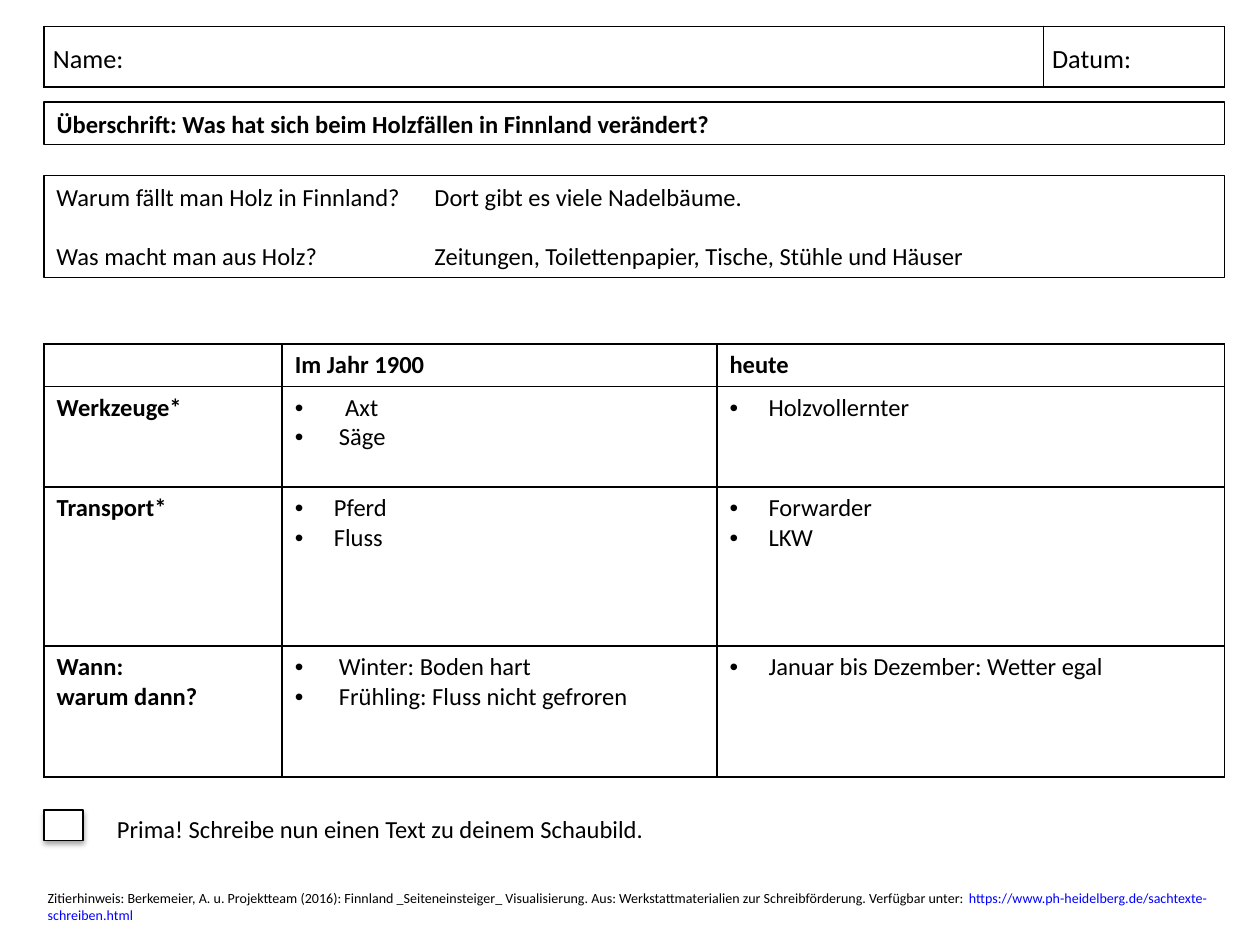
"""Build a German worksheet slide about logging in Finland, then and now."""
from typing import NamedTuple

from lxml.etree import SubElement
from pptx import Presentation
from pptx.dml.color import RGBColor
from pptx.enum.shapes import MSO_SHAPE
from pptx.enum.text import MSO_ANCHOR as Anchor, MSO_AUTO_SIZE as AutoSize, PP_ALIGN as Align
from pptx.oxml.ns import qn
from pptx.util import Inches, Pt

COLORS = {"ink": "000000", "paper": "FFFFFF", "link": "0000FF"}
FONT_NAME = "Calibri"
LEFT, WIDTH = 0.35, 9.37
BODY_SIZE = 14


class Box(NamedTuple):
    left: float
    top: float
    width: float
    height: float

    def lengths(self) -> list:
        return [Inches(value) for value in self]


class Line(NamedTuple):
    text: str
    bold: bool = False
    size: float = BODY_SIZE
    hang: float = 0
    indent: float = 0
    tab: float = 0
    space_before: float = 0
    line_spacing: float = 1


class Row(NamedTuple):
    height: float
    cells: list[list[Line]]


def color(name: str) -> RGBColor:
    return RGBColor.from_string(COLORS[name])


def write(frame, lines: list[Line]) -> None:
    """Fill a text frame with formatted paragraphs."""
    frame.word_wrap = True
    for index, line in enumerate(lines):
        paragraph = frame.add_paragraph() if index else frame.paragraphs[0]
        paragraph.alignment = Align.LEFT
        paragraph.line_spacing = line.line_spacing
        paragraph.space_before = Pt(line.space_before)
        properties = paragraph._p.get_or_add_pPr()
        if line.hang:
            SubElement(properties, qn("a:buFont"), typeface="Arial")
            SubElement(properties, qn("a:buChar"), char="•")
        if line.hang or line.indent:
            properties.set("marL", str(Inches(line.hang + line.indent)))
            properties.set("indent", str(Inches(-line.hang)))
        if line.tab:
            stops = SubElement(properties, qn("a:tabLst"))
            SubElement(stops, qn("a:tab"), pos=str(Inches(line.tab)), algn="l")
        font = paragraph.font
        font.name, font.size, font.bold = FONT_NAME, Pt(line.size), line.bold
        font.color.rgb = color("ink")
        if line.text:
            paragraph.add_run().text = line.text
        else:
            SubElement(paragraph._p, qn("a:endParaRPr"), sz=str(line.size * 100))


def outline(shape) -> None:
    shape.line.color.rgb = color("ink")
    shape.line.width = Pt(0.75)


def add_box(slide, box: Box, lines: list[Line], outlined: bool = True):
    """Add a rectangle with text anchored in the middle."""
    shape = slide.shapes.add_shape(MSO_SHAPE.RECTANGLE, *box.lengths())
    shape.shadow.inherit = False
    shape.fill.solid()
    shape.fill.fore_color.rgb = color("paper")
    if outlined:
        outline(shape)
    else:
        shape.line.fill.background()
    shape.text_frame.vertical_anchor = Anchor.MIDDLE
    write(shape.text_frame, lines)
    return shape


def add_borders(cell) -> None:
    properties = cell._tc.get_or_add_tcPr()
    for index, side in enumerate(("lnL", "lnR", "lnT", "lnB")):
        border = SubElement(properties, qn(f"a:{side}"), w=str(Pt(1)))
        fill = SubElement(border, qn("a:solidFill"))
        SubElement(fill, qn("a:srgbClr"), val=COLORS["ink"])
        properties.insert(index, border)


def add_grid(slide, top: float, columns: list[float], rows: list[Row]):
    """Add a table with plain cells and thin borders."""
    box = Box(LEFT, top, WIDTH, sum(row.height for row in rows))
    table = slide.shapes.add_table(len(rows), len(columns), *box.lengths()).table
    table.first_row = table.horz_banding = False
    for column, width in zip(table.columns, columns):
        column.width = Inches(width)
    for table_row, row in zip(table.rows, rows):
        table_row.height = Inches(row.height)
        for cell, lines in zip(table_row.cells, row.cells):
            cell.fill.background()
            add_borders(cell)
            write(cell.text_frame, lines)
    return table


def add_soft_shadow(shape) -> None:
    effects = shape._element.spPr.find(qn("a:effectLst"))
    shadow = SubElement(effects, qn("a:outerShdw"), blurRad=str(Pt(3.1)),
                        dist=str(Pt(1.8)), dir="5400000", rotWithShape="0")
    shade = SubElement(shadow, qn("a:srgbClr"), val=COLORS["ink"])
    SubElement(shade, qn("a:alpha"), val="35000")


def set_title(slide, box: Box, text: str) -> None:
    title = slide.shapes.title
    title.left, title.top, title.width, title.height = box.lengths()
    outline(title)
    title.text_frame.auto_size = AutoSize.NONE
    title.text_frame.vertical_anchor = Anchor.MIDDLE
    write(title.text_frame, [Line(text, bold=True)])


def add_citation(slide, box: Box, text: str, address: str) -> None:
    frame = slide.shapes.add_textbox(*box.lengths()).text_frame
    write(frame, [Line(text, size=8)])
    run = frame.paragraphs[0].add_run()
    run.text = address
    run.font.color.rgb = color("link")


def head(*texts: str) -> list[Line]:
    return [Line(text, bold=True) for text in texts]


def bullets(*texts: str, hang: float = 0.31) -> list[Line]:
    return [Line(text, hang=hang) for text in texts]


def main() -> None:
    presentation = Presentation()
    presentation.slide_width, presentation.slide_height = Inches(10), Inches(7.5)
    slide = presentation.slides.add_slide(presentation.slide_layouts[5])

    set_title(slide, Box(LEFT, 0.81, WIDTH, 0.34),
              "Überschrift: Was hat sich beim Holzfällen in Finnland verändert?")
    labels = [[Line(text, size=15, line_spacing=1.15)] for text in ("Name:", "Datum:")]
    name_table = add_grid(slide, 0.21, [7.93, 1.44], [Row(0.48, labels)])
    for cell in name_table.iter_cells():
        cell.vertical_anchor = Anchor.MIDDLE
        cell.margin_left = cell.margin_right = Inches(0.07)
        cell.margin_top = cell.margin_bottom = 0

    add_box(slide, Box(LEFT, 1.39, WIDTH, 0.81), [
        Line("Warum fällt man Holz in Finnland?\tDort gibt es viele Nadelbäume.", tab=3),
        Line("Was macht man aus Holz?\tZeitungen, Toilettenpapier, Tische, Stühle und Häuser",
             tab=3, space_before=17),
    ])
    add_box(slide, Box(0.43, 6.41, 9.29, 0.34),
            [Line("Prima! Schreibe nun einen Text zu deinem Schaubild.", indent=0.4)],
            outlined=False)
    add_soft_shadow(add_box(slide, Box(LEFT, 6.43, 0.31, 0.24), []))

    add_grid(slide, 2.73, [1.89, 3.45, 4.03], [
        Row(0.33, [head(""), head("Im Jahr 1900"), head("heute")]),
        Row(0.8, [head("Werkzeuge*"), bullets("Axt", hang=0.4) + bullets("Säge", hang=0.35),
                  bullets("Holzvollernter")]),
        Row(1.26, [head("Transport*"), bullets("Pferd", "Fluss"), bullets("Forwarder", "LKW")]),
        Row(1.04, [head("Wann:", "warum dann?"),
                   bullets("Winter: Boden hart", "Frühling: Fluss nicht gefroren", hang=0.35),
                   bullets("Januar bis Dezember: Wetter egal")]),
    ])
    add_citation(slide, Box(0.28, 7.01, 9.45, 0.37),
                 "Zitierhinweis: Berkemeier, A. u. Projektteam (2016): Finnland _Seiteneinsteiger_ "
                 "Visualisierung. Aus: Werkstattmaterialien zur Schreibförderung. Verfügbar unter: ",
                 "https://www.ph-heidelberg.de/sachtexte-schreiben.html")
    presentation.save("out.pptx")


if __name__ == "__main__":
    main()
